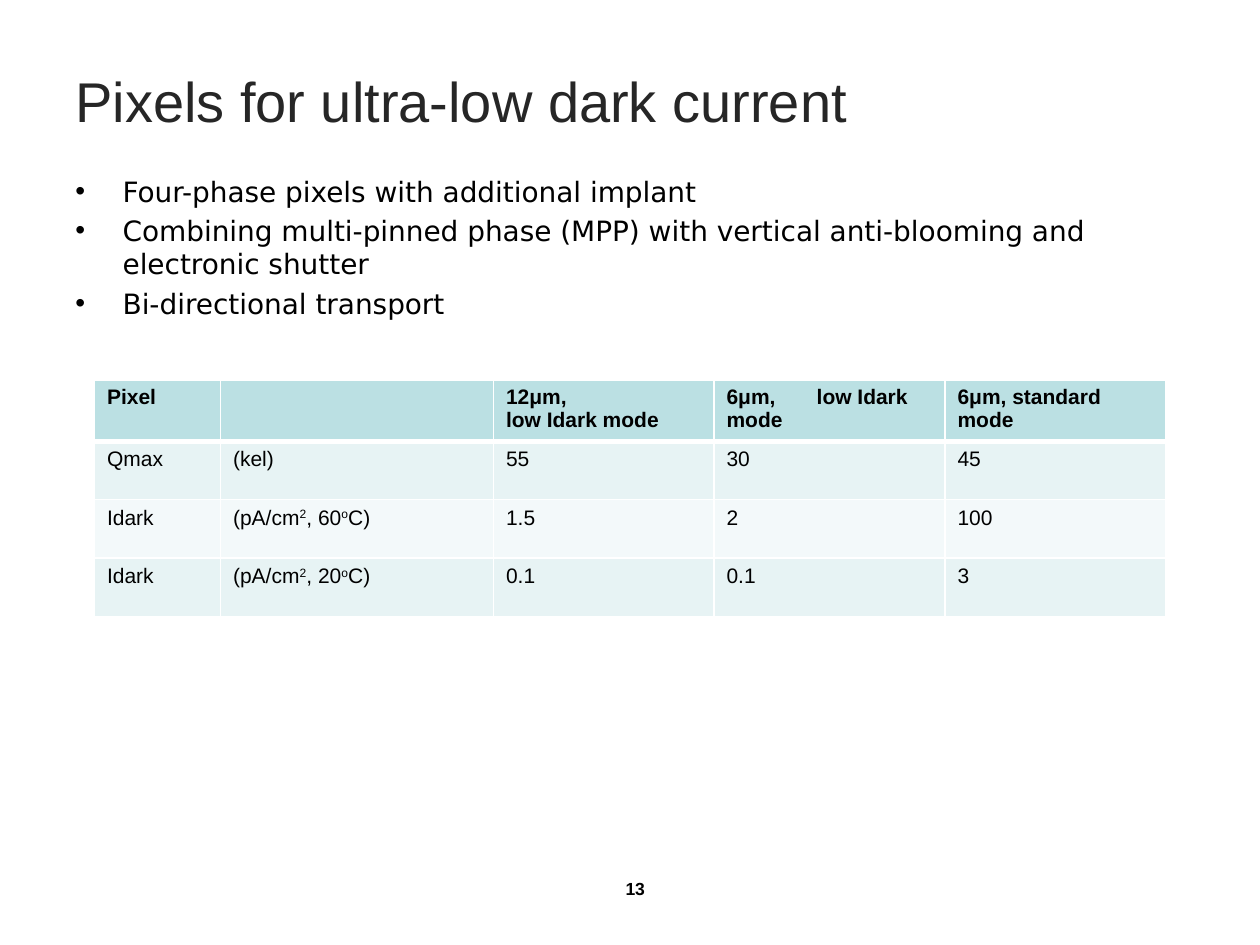
from lxml import etree
from pptx import Presentation
from pptx.dml.color import RGBColor
from pptx.enum.text import MSO_ANCHOR, PP_ALIGN
from pptx.oxml.ns import qn
from pptx.util import Pt

LEFT, CENTER = PP_ALIGN.LEFT, PP_ALIGN.CENTER
TOP, MIDDLE = MSO_ANCHOR.TOP, MSO_ANCHOR.MIDDLE
BLACK = RGBColor(0x00, 0x00, 0x00)
CHARCOAL = RGBColor(0x26, 0x26, 0x26)
WHITE = RGBColor(0xFF, 0xFF, 0xFF)
HEADER_TEAL = RGBColor(0xBB, 0xE0, 0xE3)
BANDS = (RGBColor(0xE7, 0xF3, 0xF4), RGBColor(0xF3, 0xF9, 0xFA))

TITLE = "Pixels for ultra-low dark current"
FEATURES = [
    "Four-phase pixels with additional implant",
    "Combining multi-pinned phase (MPP) with vertical anti-blooming and electronic shutter",
    "Bi-directional transport",
]
PIXEL_ROWS = [
    ["Pixel", "", "12μm,\nlow Idark mode", "6μm,\tlow Idark mode", "6μm, standard mode"],
    ["Qmax", "(kel)", "55", "30", "45"],
    ["Idark", "(pA/cm^2^, 60^o^C)", "1.5", "2", "100"],
    ["Idark", "(pA/cm^2^, 20^o^C)", "0.1", "0.1", "3"],
]
PAGE_NUMBER = "13"
COLUMN_WIDTHS = [72, 156, 126, 132, 126]
ROW_HEIGHT = 33.4
TAB_STOP = 51.5
HANGING = 27


def write(frame, text, size, font="Arial", color=BLACK, bold=False, align=LEFT,
          anchor=TOP, bullet=None, gap=0, line_spacing=None):
    frame.word_wrap = True
    frame.vertical_anchor = anchor
    for index, line in enumerate(text.split("\n")):
        paragraph = frame.add_paragraph() if index else frame.paragraphs[0]
        paragraph.alignment = align
        if line_spacing:
            paragraph.line_spacing = line_spacing
        if index and gap:
            paragraph.space_before = Pt(gap)
        properties = paragraph._p.get_or_add_pPr()
        if bullet:
            properties.set("marL", str(Pt(HANGING)))
            properties.set("indent", str(-Pt(HANGING)))
            etree.SubElement(properties, qn("a:buFont"), typeface="Arial")
            etree.SubElement(properties, qn("a:buChar"), char=bullet)
        if "\t" in line:
            tabs = etree.SubElement(properties, qn("a:tabLst"))
            etree.SubElement(tabs, qn("a:tab"), pos=str(Pt(TAB_STOP)), algn="l")
        for part, piece in enumerate(line.split("^")):
            run = paragraph.add_run()
            run.text = piece
            run.font.size = Pt(size)
            run.font.name = font
            run.font.bold = bold
            run.font.color.rgb = color
            if part % 2:
                run.font._element.set("baseline", "30000")


def add_text(slide, box, text, **form):
    frame = slide.shapes.add_textbox(*map(Pt, box)).text_frame
    write(frame, text, **form)


def set_borders(cell, **widths):
    properties = cell._tc.get_or_add_tcPr()
    for side in "LRTB":
        line = etree.SubElement(properties, qn(f"a:ln{side}"), w=str(Pt(widths.get(side, 1))))
        fill = etree.SubElement(line, qn("a:solidFill"))
        etree.SubElement(fill, qn("a:srgbClr"), val=str(WHITE))


def add_pixel_table(slide):
    table = slide.shapes.add_table(
        len(PIXEL_ROWS), len(COLUMN_WIDTHS), Pt(54), Pt(217.5),
        Pt(sum(COLUMN_WIDTHS)), Pt(ROW_HEIGHT * len(PIXEL_ROWS))).table
    for column, width in zip(table.columns, COLUMN_WIDTHS):
        column.width = Pt(width)
    for r, values in enumerate(PIXEL_ROWS):
        table.rows[r].height = Pt(ROW_HEIGHT)
        header = r == 0
        for c, value in enumerate(values):
            cell = table.cell(r, c)
            set_borders(cell, T=3 if r == 1 else 1, B=3 if header else 1)
            cell.fill.solid()
            cell.fill.fore_color.rgb = HEADER_TEAL if header else BANDS[(r - 1) % 2]
            if value:
                write(cell.text_frame, value, size=12, bold=header,
                      line_spacing=0.95 if header else None)


def main():
    presentation = Presentation()
    presentation.slide_width, presentation.slide_height = Pt(720), Pt(540)
    slide = presentation.slides.add_slide(presentation.slide_layouts[6])
    add_text(slide, (342, 498.25, 42, 19.5), PAGE_NUMBER, size=10, bold=True, align=CENTER)
    add_text(slide, (36, 24, 648, 66), TITLE, size=32, color=CHARCOAL, anchor=MIDDLE)
    add_text(slide, (36, 96, 648, 90), "\n".join(FEATURES), size=16,
             font="DejaVu Sans", bullet="•", gap=3.2)
    add_pixel_table(slide)
    presentation.save("out.pptx")


if __name__ == "__main__":
    main()
